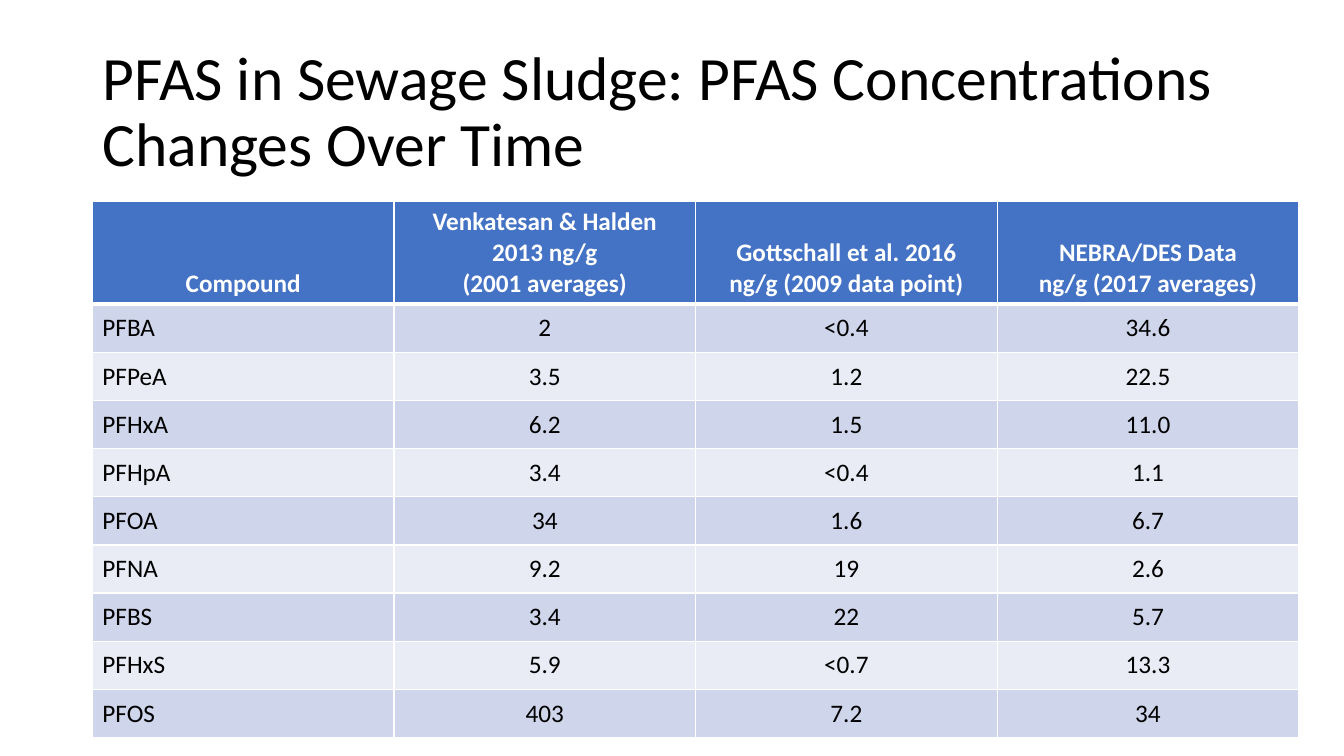
import dataclasses

import lxml.etree
import pptx
import pptx.dml.color
import pptx.enum.text
import pptx.oxml.ns
import pptx.util

Pt = pptx.util.Pt
Align = pptx.enum.text.PP_ALIGN
Anchor = pptx.enum.text.MSO_ANCHOR


@dataclasses.dataclass(frozen=True)
class Theme:
    font: str = "Calibri"
    title_size: int = 44
    table_size: int = 18
    text: str = "000000"
    header_text: str = "FFFFFF"
    header_fill: str = "4472C4"
    bands: tuple = ("CFD5EA", "E9EBF5")
    border: str = "FFFFFF"


THEME = Theme()
TITLE = "PFAS in Sewage Sludge: PFAS Concentrations Changes Over Time"
HEADERS = (
    "Compound",
    "Venkatesan & Halden\n2013 ng/g\n(2001 averages)",
    "Gottschall et al. 2016\nng/g (2009 data point)",
    "NEBRA/DES Data\nng/g (2017 averages)",
)
CONCENTRATIONS = (
    ("PFBA", "2", "<0.4", "34.6"),
    ("PFPeA", "3.5", "1.2", "22.5"),
    ("PFHxA", "6.2", "1.5", "11.0"),
    ("PFHpA", "3.4", "<0.4", "1.1"),
    ("PFOA", "34", "1.6", "6.7"),
    ("PFNA", "9.2", "19", "2.6"),
    ("PFBS", "3.4", "22", "5.7"),
    ("PFHxS", "5.9", "<0.7", "13.3"),
    ("PFOS", "403", "7.2", "34"),
)


def rgb(color):
    return pptx.dml.color.RGBColor.from_string(color)


def format_paragraph(paragraph, size, color, alignment, bold=False):
    paragraph.alignment = alignment
    for run in paragraph.runs:
        run.font.name = THEME.font
        run.font.size = Pt(size)
        run.font.bold = bold
        run.font.color.rgb = rgb(color)


def add_title(slide, text):
    title = slide.shapes.title
    title.left, title.top = Pt(66), Pt(28.8)
    title.width, title.height = Pt(828), Pt(104.4)
    title.text_frame.text = text
    title.text_frame.vertical_anchor = Anchor.MIDDLE
    paragraph = title.text_frame.paragraphs[0]
    paragraph.line_spacing = 0.9
    format_paragraph(paragraph, THEME.title_size, THEME.text, Align.LEFT)


def set_borders(cell, widths):
    """Draw solid cell borders; widths maps the sides L, R, T, B to points."""
    properties = cell._tc.get_or_add_tcPr()
    qn = pptx.oxml.ns.qn
    for side in "LRTB":
        line = lxml.etree.SubElement(properties, qn(f"a:ln{side}"), w=str(Pt(widths[side])))
        fill = lxml.etree.SubElement(line, qn("a:solidFill"))
        lxml.etree.SubElement(fill, qn("a:srgbClr"), val=THEME.border)


def fill_cell(cell, text, row, column):
    is_header = row == 0
    set_borders(cell, {"L": 1, "R": 1, "T": 3 if row == 1 else 1, "B": 3 if is_header else 1})
    cell.fill.solid()
    cell.fill.fore_color.rgb = rgb(THEME.header_fill if is_header else THEME.bands[(row - 1) % 2])
    cell.vertical_anchor = Anchor.BOTTOM if is_header else Anchor.MIDDLE
    cell.text_frame.text = text
    color = THEME.header_text if is_header else THEME.text
    alignment = Align.CENTER if is_header or column > 0 else Align.LEFT
    for paragraph in cell.text_frame.paragraphs:
        format_paragraph(paragraph, THEME.table_size, color, alignment, is_header)


def add_table(slide, rows):
    header_height, row_height, column_width = 72.4, 34.4, 215.46
    row_count, column_count = len(rows), len(rows[0])
    table = slide.shapes.add_table(
        row_count, column_count, Pt(66), Pt(144.2), Pt(column_width * column_count),
        Pt(header_height + row_height * (row_count - 1)),
    ).table
    for column in table.columns:
        column.width = Pt(column_width)
    for row, texts in enumerate(rows):
        table.rows[row].height = Pt(row_height if row else header_height)
        for column, text in enumerate(texts):
            fill_cell(table.cell(row, column), text, row, column)


def main():
    presentation = pptx.Presentation()
    presentation.slide_width, presentation.slide_height = Pt(960), Pt(540)
    slide = presentation.slides.add_slide(presentation.slide_layouts.get_by_name("Title Only"))
    add_title(slide, TITLE)
    add_table(slide, (HEADERS, *CONCENTRATIONS))
    presentation.save("out.pptx")


if __name__ == "__main__":
    main()
